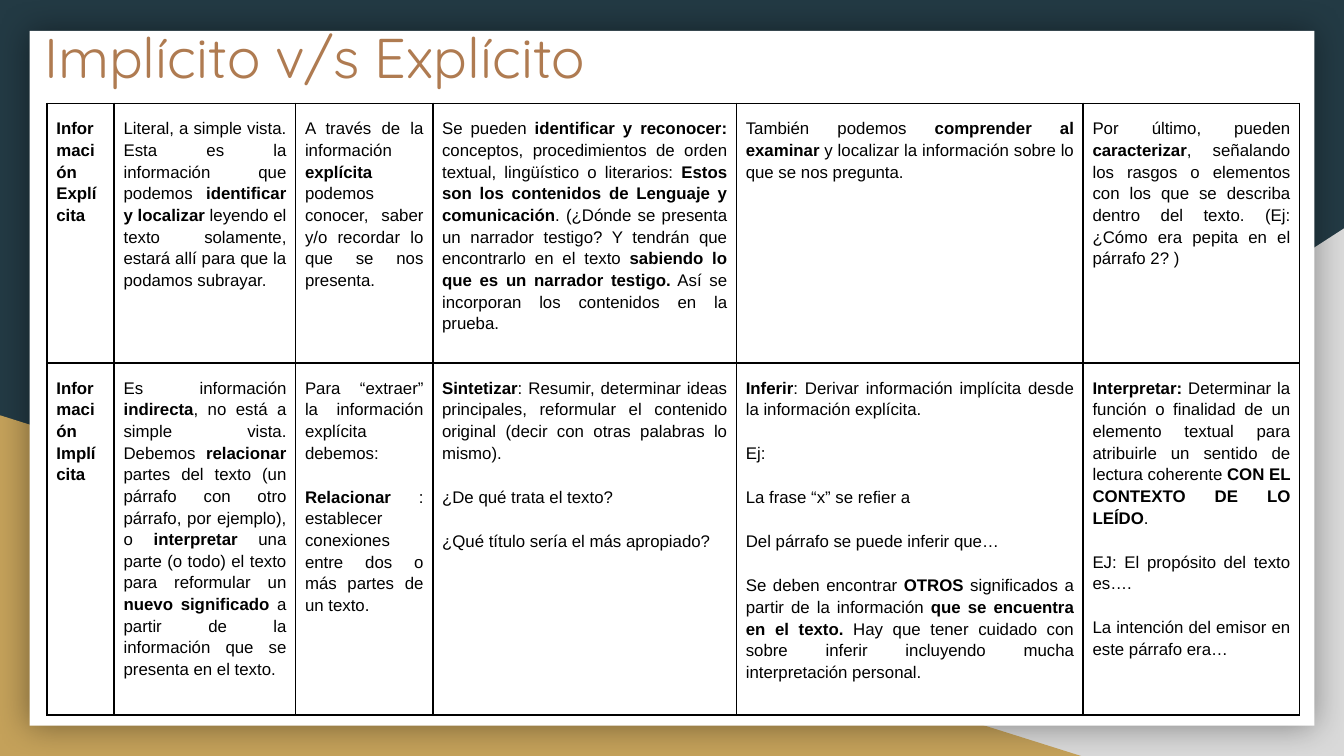
from lxml import etree
from pptx import Presentation
from pptx.dml.color import RGBColor
from pptx.enum.shapes import MSO_SHAPE
from pptx.enum.text import MSO_ANCHOR, PP_ALIGN
from pptx.oxml.ns import qn
from pptx.util import Inches, Pt

RECTANGLE = MSO_SHAPE.RECTANGLE
TRIANGLE = MSO_SHAPE.RIGHT_TRIANGLE
JUSTIFY = PP_ALIGN.JUSTIFY
MIDDLE = MSO_ANCHOR.MIDDLE

COLUMN_WIDTHS = [0.5, 1.35, 1.02, 2.26, 2.58, 1.61]
ROW_HEIGHTS = [1.9, 2.51]

EXPLICIT = [
    ["**Información Explícita**"],
    ["Literal, a simple vista. Esta es la información que podemos "
     "**identificar y localizar **leyendo el texto solamente, estará allí "
     "para que la podamos subrayar."],
    ["A través de la información **explícita** podemos conocer, saber y/o "
     "recordar lo que se nos presenta."],
    ["Se pueden **identificar y reconocer: **conceptos, procedimientos de "
     "orden textual, lingüístico o literarios: **Estos son los contenidos de "
     "Lenguaje y comunicación**. (¿Dónde se presenta un narrador testigo? Y "
     "tendrán que encontrarlo en el texto **sabiendo lo que es un narrador "
     "testigo.** Así se incorporan los contenidos en la prueba."],
    ["También podemos **comprender al examinar** y localizar la información "
     "sobre lo que se nos pregunta."],
    ["Por último, pueden **caracterizar**, señalando los rasgos o elementos "
     "con los que se describa dentro del texto. (Ej: ¿Cómo era pepita en el "
     "párrafo 2? )"],
]
IMPLICIT = [
    ["**Información Implícita**"],
    ["Es información **indirecta**, no está a simple vista. Debemos "
     "**relacionar** partes del texto (un párrafo con otro párrafo, por "
     "ejemplo), o **interpretar** una parte (o todo) el texto para reformular "
     "un **nuevo significado** a partir de la información que se presenta en "
     "el texto."],
    ["Para “extraer” la información explícita debemos:",
     "**Relacionar** : establecer conexiones entre dos o más partes de un "
     "texto."],
    ["**Sintetizar**: Resumir, determinar ideas principales, reformular el "
     "contenido original (decir con otras palabras lo mismo).",
     "¿De qué trata el texto?",
     "¿Qué título sería el más apropiado?"],
    ["**Inferir**: Derivar información implícita desde la información "
     "explícita.",
     "Ej:",
     "La frase “x” se refier a",
     "Del párrafo se puede inferir que…",
     "Se deben encontrar **OTROS **significados a partir de la información "
     "**que se encuentra en el texto.** Hay que tener cuidado con sobre "
     "inferir incluyendo mucha interpretación personal."],
    ["**Interpretar:** Determinar la función o finalidad de un elemento "
     "textual para atribuirle un sentido de lectura coherente **CON EL "
     "CONTEXTO DE LO LEÍDO**.",
     "EJ: El propósito del texto es….",
     "La intención del emisor en este párrafo era…"],
]


def color(value):
    return RGBColor.from_string(value)


class SlideBuilder:
    title_font = "Quicksand"
    body_font = "Arial"
    accent = "AF7B51"
    ink = "000000"

    def __init__(self, slide):
        self.slide = slide

    def background(self, fill):
        self.slide.background.fill.solid()
        self.slide.background.fill.fore_color.rgb = color(fill)

    def panel(self, kind, left, top, width, height, fill):
        panel = self.slide.shapes.add_shape(
            kind, Inches(left), Inches(top), Inches(width), Inches(height))
        panel.shadow.inherit = False
        panel.fill.solid()
        panel.fill.fore_color.rgb = color(fill)
        panel.line.fill.background()
        return panel

    def flip(self, panel):
        panel._element.spPr.find(qn("a:xfrm")).set("flipH", "1")

    def glow_shadow(self, panel, blur, opacity):
        effects = panel._element.spPr.find(qn("a:effectLst"))
        shadow = etree.SubElement(effects, qn("a:outerShdw"),
                                  blurRad=str(Pt(blur)), dist="0", dir="0",
                                  algn="ctr", rotWithShape="0")
        tint = etree.SubElement(shadow, qn("a:srgbClr"), val=self.ink)
        etree.SubElement(tint, qn("a:alpha"), val=str(opacity * 1000))

    def style(self, font, name, size, ink):
        font.name = name
        font.size = Pt(size)
        font.color.rgb = color(ink)

    def title(self, text, left, top, width, height):
        frame = self.slide.shapes.add_textbox(
            Inches(left), Inches(top), Inches(width), Inches(height)).text_frame
        frame.word_wrap = True
        frame.vertical_anchor = MIDDLE
        frame.margin_left = frame.margin_right = Inches(0.1)
        frame.margin_top = frame.margin_bottom = Inches(0.1)
        frame.text = text
        self.style(frame.paragraphs[0].runs[0].font,
                   self.title_font, 30, self.accent)

    def paragraph(self, paragraph, marked_text):
        paragraph.alignment = JUSTIFY
        paragraph.line_spacing = 1.15
        for index, part in enumerate(marked_text.split("**")):
            if part:
                run = paragraph.add_run()
                run.text = part
                self.style(run.font, self.body_font, 9, self.ink)
                run.font.bold = index % 2 == 1

    def borders(self, cell):
        properties = cell._tc.get_or_add_tcPr()
        for side in ("a:lnL", "a:lnR", "a:lnT", "a:lnB"):
            line = etree.SubElement(properties, qn(side), w=str(Pt(1)))
            fill = etree.SubElement(line, qn("a:solidFill"))
            etree.SubElement(fill, qn("a:srgbClr"), val=self.ink)

    def cell(self, cell, texts):
        cell.margin_left = cell.margin_right = Inches(0.07)
        cell.margin_top = cell.margin_bottom = Inches(0.1)
        self.borders(cell)
        cell.fill.background()
        frame = cell.text_frame
        self.paragraph(frame.paragraphs[0], texts[0])
        for text in texts[1:]:
            paragraph = frame.add_paragraph()
            paragraph.space_before = Pt(12)
            self.paragraph(paragraph, text)

    def table(self, left, top, widths, heights, rows):
        table = self.slide.shapes.add_table(
            len(heights), len(widths), Inches(left), Inches(top),
            Inches(sum(widths)), Inches(sum(heights))).table
        table.first_row = False
        table.horz_banding = False
        for column, width in zip(table.columns, widths):
            column.width = Inches(width)
        for row, height, contents in zip(table.rows, heights, rows):
            row.height = Inches(height)
            for cell, texts in zip(row.cells, contents):
                self.cell(cell, texts)


def main():
    deck = Presentation()
    deck.slide_width = Inches(10)
    deck.slide_height = Inches(5.625)
    builder = SlideBuilder(deck.slides.add_slide(deck.slide_layouts[6]))

    builder.background("233A44")
    gray_corner = builder.panel(TRIANGLE, 3.92, 1.7, 6.08, 3.93, "D9D9D9")
    builder.flip(gray_corner)
    builder.panel(TRIANGLE, 0, 3.09, 8.06, 2.54, "C4A15A")
    page = builder.panel(RECTANGLE, 0.22, 0.23, 9.56, 5.17, "FFFFFF")
    builder.glow_shadow(page, 18, 40)

    builder.title("Implícito v/s Explícito", 0.23, 0.07, 4.29, 0.7)
    builder.table(0.35, 0.77, COLUMN_WIDTHS, ROW_HEIGHTS, [EXPLICIT, IMPLICIT])
    deck.save("out.pptx")


if __name__ == "__main__":
    main()
